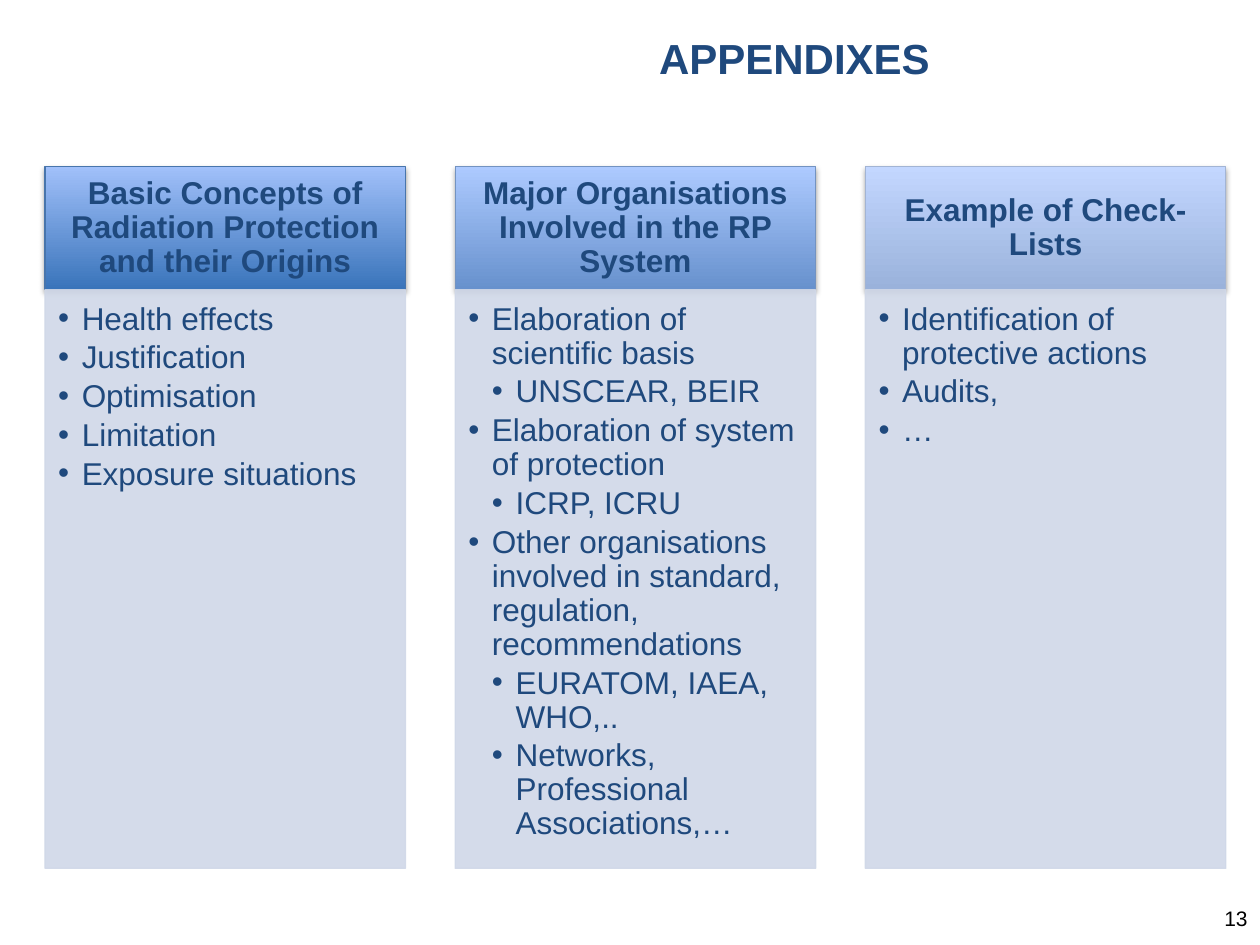
from dataclasses import dataclass

from lxml.etree import SubElement
from pptx import Presentation
from pptx.dml.color import RGBColor
from pptx.enum.shapes import MSO_SHAPE
from pptx.enum.text import MSO_ANCHOR, PP_ALIGN
from pptx.oxml.ns import qn
from pptx.shapes.autoshape import Shape
from pptx.slide import Slide
from pptx.text.text import TextFrame, _Paragraph
from pptx.util import Pt

FONT = "Arial"
NAVY = "1F497D"
PANEL = "D0D8E8"
TEXT_SIZE = 18

# Column grid, in points
FIRST_LEFT, COLUMN_PITCH, COLUMN_WIDTH = 25.7, 234.4, 206
HEADER_TOP, HEADER_HEIGHT, BODY_HEIGHT = 95, 70.6, 330.6
BULLET_INDENT = 13.5


@dataclass
class Item:
    text: str
    level: int = 1


@dataclass
class Column:
    heading: str
    bottom_color: str
    top_color: str
    line_color: str
    items: list[Item]


COLUMNS = [
    Column("Basic Concepts of Radiation Protection and their Origins",
           "3974BA", "A1C0FA", "4875AC",
           [Item("Health effects"), Item("Justification"), Item("Optimisation"),
            Item("Limitation"), Item("Exposure situations")]),
    Column("Major Organisations Involved in the RP System",
           "6791CD", "ADCAFF", "7393C1",
           [Item("Elaboration of scientific basis"),
            Item("UNSCEAR, BEIR", 2),
            Item("Elaboration of system of protection"),
            Item("ICRP, ICRU", 2),
            Item("Other organisations involved in standard, regulation, recommendations"),
            Item("EURATOM, IAEA, WHO,..", 2),
            Item("Networks, Professional Associations,…", 2)]),
    Column("Example of Check-Lists",
           "9AB2DB", "C3D7FF", "A2B4D4",
           [Item("Identification of protective actions"), Item("Audits,"), Item("…")]),
]


def color(value: str) -> RGBColor:
    return RGBColor.from_string(value)


def set_font(paragraph: _Paragraph, size: float, value: str, bold: bool = False) -> None:
    font = paragraph.font
    font.name, font.size, font.bold = FONT, Pt(size), bold
    font.color.rgb = color(value)


def set_margins(frame: TextFrame, left: float, top: float, right: float, bottom: float) -> None:
    frame.margin_left, frame.margin_top = Pt(left), Pt(top)
    frame.margin_right, frame.margin_bottom = Pt(right), Pt(bottom)


def add_label(page: Slide, text: str, left: float, top: float, width: float, height: float,
              align: PP_ALIGN, anchor: MSO_ANCHOR, size: float, value: str, bold: bool) -> None:
    box = page.shapes.add_textbox(Pt(left), Pt(top), Pt(width), Pt(height))
    frame = box.text_frame
    frame.word_wrap = True
    frame.vertical_anchor = anchor
    paragraph = frame.paragraphs[0]
    paragraph.text, paragraph.alignment = text, align
    set_font(paragraph, size, value, bold)


def add_panel(page: Slide, left: float, top: float, height: float, line_color: str) -> Shape:
    panel = page.shapes.add_shape(MSO_SHAPE.RECTANGLE, Pt(left), Pt(top),
                                  Pt(COLUMN_WIDTH), Pt(height))
    panel.shadow.inherit = False
    panel.line.color.rgb = color(line_color)
    panel.line.width = Pt(0.75)
    panel.text_frame.word_wrap = True
    return panel


def add_shadow(panel: Shape) -> None:
    effects = panel.element.spPr.find(qn("a:effectLst"))
    shadow = SubElement(effects, qn("a:outerShdw"), blurRad=str(Pt(3.1)), dist=str(Pt(1.8)),
                        dir="5400000", rotWithShape="0")
    black = SubElement(shadow, qn("a:srgbClr"), val="000000")
    SubElement(black, qn("a:alpha"), val="35000")


def add_bullet(paragraph: _Paragraph, level: int) -> None:
    properties = paragraph._p.get_or_add_pPr()
    properties.set("marL", str(Pt(BULLET_INDENT * level)))
    properties.set("indent", str(-Pt(BULLET_INDENT)))
    SubElement(properties, qn("a:buFont"), typeface=FONT)
    SubElement(properties, qn("a:buChar"), char="•")


def add_header(page: Slide, column: Column, left: float) -> None:
    header = add_panel(page, left, HEADER_TOP, HEADER_HEIGHT, column.line_color)
    header.fill.gradient()
    header.fill.gradient_angle = 90
    for stop, value in zip(header.fill.gradient_stops, (column.bottom_color, column.top_color)):
        stop.color.rgb = color(value)
    add_shadow(header)
    frame = header.text_frame
    frame.vertical_anchor = MSO_ANCHOR.MIDDLE
    set_margins(frame, 10, 5.7, 10, 5.7)
    paragraph = frame.paragraphs[0]
    paragraph.text, paragraph.alignment = column.heading, PP_ALIGN.CENTER
    paragraph.line_spacing = 0.9
    set_font(paragraph, TEXT_SIZE, NAVY, True)


def add_body(page: Slide, column: Column, left: float) -> None:
    body = add_panel(page, left, HEADER_TOP + HEADER_HEIGHT, BODY_HEIGHT, PANEL)
    body.fill.solid()
    body.fill.fore_color.rgb = color(PANEL)
    for tint in body.element.spPr.iter(qn("a:srgbClr")):
        SubElement(tint, qn("a:alpha"), val="90000")
    frame = body.text_frame
    frame.vertical_anchor = MSO_ANCHOR.TOP
    set_margins(frame, 7.5, 7.5, 10, 11.3)
    for index, item in enumerate(column.items):
        paragraph = frame.add_paragraph() if index else frame.paragraphs[0]
        paragraph.text, paragraph.level = item.text, item.level
        paragraph.alignment = PP_ALIGN.LEFT
        add_bullet(paragraph, item.level)
        paragraph.line_spacing, paragraph.space_after = 0.9, Pt(2.7)
        set_font(paragraph, TEXT_SIZE, NAVY)


def main() -> None:
    deck = Presentation()
    deck.slide_width, deck.slide_height = Pt(720), Pt(540)
    page = deck.slides.add_slide(deck.slide_layouts[6])

    # Title
    add_label(page, "APPENDIXES", 196, 15, 516, 36, PP_ALIGN.CENTER, MSO_ANCHOR.MIDDLE,
              24, NAVY, True)

    # Three columns, each a heading over a list
    for index, column in enumerate(COLUMNS):
        left = FIRST_LEFT + index * COLUMN_PITCH
        add_header(page, column, left)
        add_body(page, column, left)

    # Page number
    add_label(page, "13", 683, 514, 37, 24.5, PP_ALIGN.RIGHT, MSO_ANCHOR.TOP,
              12, "000000", False)

    deck.save("out.pptx")


if __name__ == "__main__":
    main()
